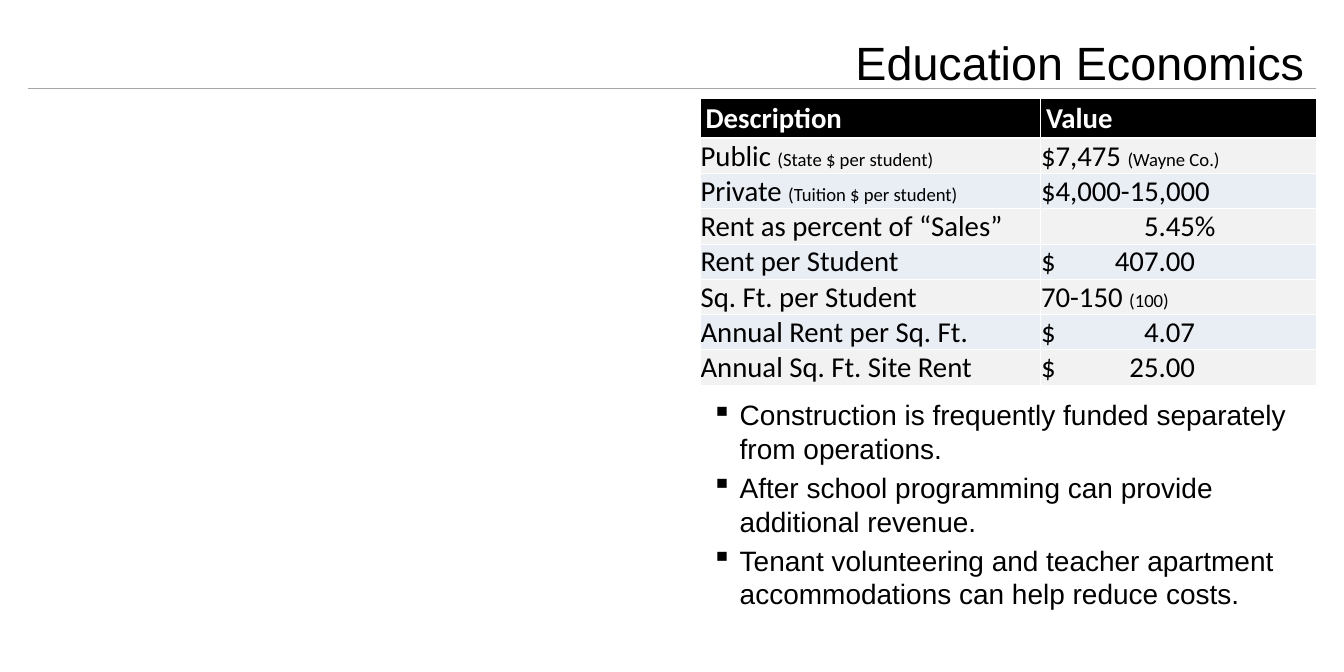
from lxml.etree import SubElement
from pptx import Presentation
from pptx.dml.color import RGBColor
from pptx.enum.shapes import MSO_CONNECTOR as CONNECTOR
from pptx.enum.text import MSO_ANCHOR as ANCHOR, PP_ALIGN as ALIGN
from pptx.oxml.ns import qn
from pptx.util import Inches, Pt


def color(value):
    return RGBColor.from_string(value)


def add_span(para, text, size, font, ink="000000", bold=False):
    span = para.add_run()
    span.text = text
    span.font.size = Pt(size)
    span.font.name = font
    span.font.bold = bold
    span.font.color.rgb = color(ink)


deck = Presentation()
deck.slide_width, deck.slide_height = Inches(24), Inches(12)
page = deck.slides.add_slide(deck.slide_layouts[6])
left, width = Inches(12.5), Inches(11)

# Rule under the title
rule = page.shapes.add_connector(
    CONNECTOR.STRAIGHT, Inches(23.5), Inches(1.58), Inches(0.5), Inches(1.58))
rule.line.color.rgb = color("A6A6A6")
rule.line.width = Pt(0.75)
SubElement(rule._element.spPr, qn("a:effectLst"))

# Title and bullet boxes
title_box = page.shapes.add_textbox(left, Inches(0.6), width, Inches(1.1))
bullet_box = page.shapes.add_textbox(left, Inches(7), width, Inches(4.25))
for box in (title_box, bullet_box):
    frame = box.text_frame
    frame.word_wrap = True
    frame.margin_left = frame.margin_right = Inches(0.21)
    frame.margin_top = frame.margin_bottom = Inches(0.1)

title_box.text_frame.vertical_anchor = ANCHOR.BOTTOM
para = title_box.text_frame.paragraphs[0]
para.alignment = ALIGN.RIGHT
add_span(para, "Education Economics", 60, "Arial")

bullets = [
    "Construction is frequently funded separately from operations.",
    "After school programming can provide additional revenue.",
    "Tenant volunteering and teacher apartment accommodations can help reduce costs.",
]
frame = bullet_box.text_frame
for index, text in enumerate(bullets):
    para = frame.add_paragraph() if index else frame.paragraphs[0]
    para.space_before = Pt(7.2)
    props = para._p.get_or_add_pPr()
    props.set("marL", str(Inches(0.5)))
    props.set("indent", str(-Inches(0.5)))
    SubElement(props, qn("a:buChar"), char="▪")
    add_span(para, text, 36, "Arial")

# Table: each cell is a main text and an optional small note
rows = [
    [("Description", ""), ("Value", "")],
    [("Public ", "(State $ per student)"), ("$\t7,475 ", "(Wayne Co.)")],
    [("Private ", "(Tuition $ per student)"), ("$\t4,000-15,000", "")],
    [("Rent as percent of “Sales”", ""), ("\t5.45%", "")],
    [("Rent per Student", ""), ("$\t407.00", "")],
    [("Sq. Ft. per Student", ""), ("\t70-150 ", "(100)")],
    [("Annual Rent per Sq. Ft.", ""), ("$\t4.07", "")],
    [("Annual Sq. Ft. Site Rent", ""), ("$\t25.00", "")],
]
table = page.shapes.add_table(
    len(rows), 2, left, Inches(1.75), width, Inches(5.11)).table
table.columns[0].width, table.columns[1].width = Inches(6.08), Inches(4.92)

for row, texts in enumerate(rows):
    header = row == 0
    table.rows[row].height = Inches(0.7 if header else 0.63)
    for column, (text, note) in enumerate(texts):
        cell = table.cell(row, column)
        para = cell.text_frame.paragraphs[0]
        add_span(para, text, 37, "Calibri", "FFFFFF" if header else "000000", header)
        if note:
            add_span(para, note, 24, "Calibri")
        if not header:
            cell.vertical_anchor = ANCHOR.BOTTOM
            cell.margin_left = cell.margin_right = cell.margin_top = Inches(0.01)
            cell.margin_bottom = 0
        if "\t" in text:
            tabs = SubElement(para._p.get_or_add_pPr(), qn("a:tabLst"))
            SubElement(tabs, qn("a:tab"), pos=str(Inches(2.1)), algn="dec")

        # White borders, heavier under the header, then the fill
        props = cell._tc.get_or_add_tcPr()
        for side in ("lnL", "lnR", "lnT", "lnB"):
            heavy = (header and side == "lnB") or (row == 1 and side == "lnT")
            line = SubElement(props, qn("a:" + side), w=str(Pt(3 if heavy else 1)))
            paint = SubElement(line, qn("a:solidFill"))
            SubElement(paint, qn("a:srgbClr"), val="FFFFFF")
        cell.fill.solid()
        band = "F2F2F2" if row % 2 else "E9EDF4"
        cell.fill.fore_color.rgb = color("000000" if header else band)

deck.save("out.pptx")
